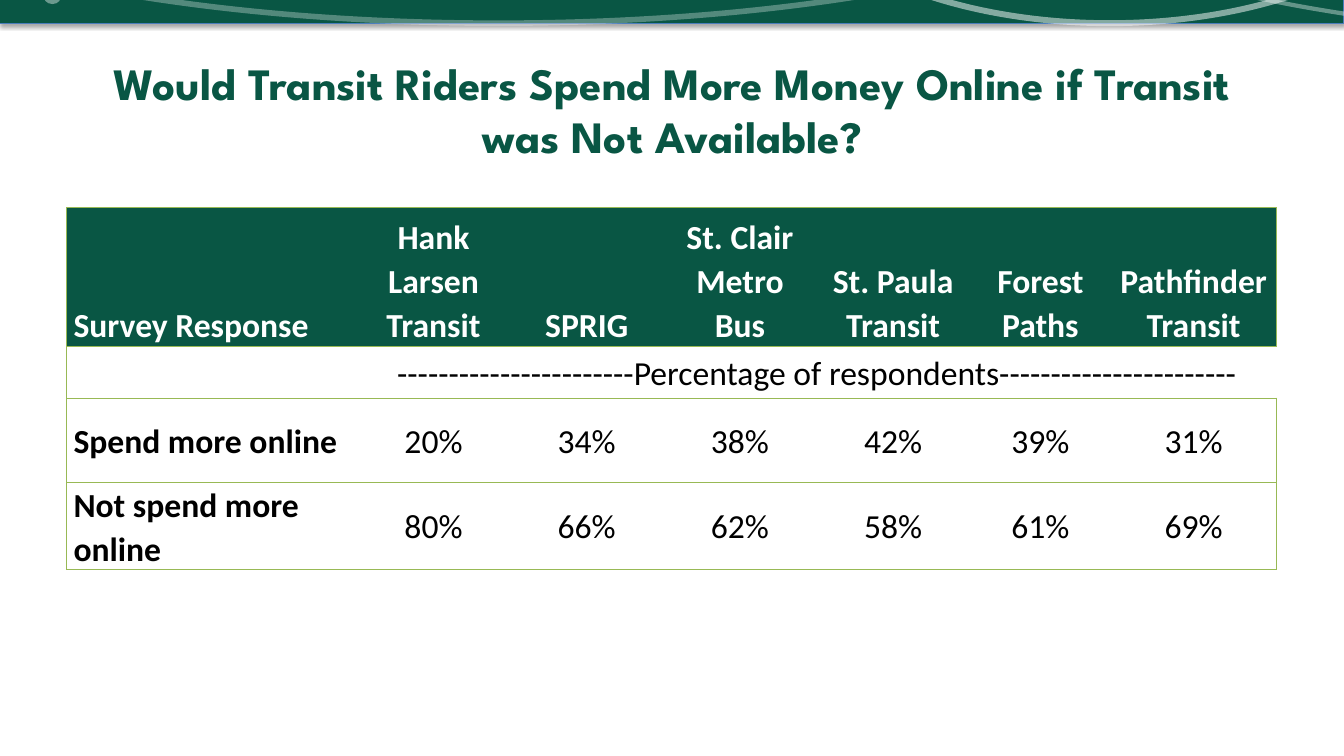
import pptx
import pptx.dml.color
import pptx.enum.shapes
import pptx.enum.text
import pptx.oxml
import pptx.oxml.ns
import pptx.util
from dataclasses import dataclass
from lxml import etree

Inches = pptx.util.Inches
Pt = pptx.util.Pt
Align = pptx.enum.text.PP_ALIGN
Anchor = pptx.enum.text.MSO_ANCHOR
Preset = pptx.enum.shapes.MSO_SHAPE


@dataclass(frozen=True)
class Theme:
    green: str = "095644"
    white: str = "FFFFFF"
    black: str = "000000"
    rule: str = "98B955"
    edge: str = "4B7EBC"
    title_font: str = "League Spartan"
    body_font: str = "Calibri"
    title_size: float = 32
    body_size: float = 24
    rule_width: float = 0.75


THEME = Theme()

SWIRLS = [
    ((-2.22, -3.75, 14.33, 3.98), 4, 30),
    ((7.67, -3.2, 6.67, 3.43), 4.25, 50),
    ((10.49, -2.5, 13.96, 2.92), 3, 37),
]
COLUMN_WIDTHS = [2.88, 1.52, 1.52, 1.52, 1.52, 1.4, 1.64]
ROW_HEIGHTS = [1.38, 0.51, 0.84, 0.84]
DASHES = "-" * 23
SURVEY = [
    ["Survey Response", "Hank Larsen Transit", "SPRIG", "St. Clair Metro Bus",
     "St. Paula Transit", "Forest Paths", "Pathfinder Transit"],
    ["", f"{DASHES}Percentage of respondents{DASHES}"],
    ["Spend more online", "20%", "34%", "38%", "42%", "39%", "31%"],
    ["Not spend more online", "80%", "66%", "62%", "58%", "61%", "69%"],
]


def rgb(color):
    return pptx.dml.color.RGBColor.from_string(color)


def add_child(parent, tag, **attributes):
    child = etree.SubElement(parent, pptx.oxml.ns.qn(tag))
    for name, value in attributes.items():
        child.set(name, str(value))
    return child


def add_span(para, text, font, size, color, bold):
    span = para.add_run()
    span.text = text
    span.font.name = font
    span.font.size = Pt(size)
    span.font.bold = bold
    span.font.color.rgb = rgb(color)


def add_preset(page, preset, place):
    shape = page.shapes.add_shape(preset, *map(Inches, place))
    shape.shadow.inherit = False
    return shape


def set_opacity(holder, percent):
    color = holder.find(".//" + pptx.oxml.ns.qn("a:srgbClr"))
    add_child(color, "a:alpha", val=percent * 1000)


def add_band(page):
    band = add_preset(page, Preset.RECTANGLE, (0, -0.17, 13.33, 0.4))
    band.fill.solid()
    band.fill.fore_color.rgb = rgb(THEME.green)
    band.line.color.rgb = rgb(THEME.edge)
    band.line.width = Pt(THEME.rule_width)
    effects = band._element.spPr.find(pptx.oxml.ns.qn("a:effectLst"))
    shadow = add_child(effects, "a:outerShdw", blurRad=Pt(3.1), dist=Pt(1.8),
                       dir=90 * 60000, rotWithShape=0)
    add_child(shadow, "a:srgbClr", val=THEME.black)
    set_opacity(shadow, 35)


def add_swirl(page, place, width, opacity):
    swirl = add_preset(page, Preset.OVAL, place)
    swirl.fill.background()
    swirl.line.color.rgb = rgb(THEME.white)
    swirl.line.width = Pt(width)
    set_opacity(swirl.line._ln, opacity)


def add_dot(page):
    dot = add_preset(page, Preset.OVAL, (0.44, -0.08, 0.16, 0.12))
    dot.fill.solid()
    dot.fill.fore_color.rgb = rgb(THEME.white)
    dot.line.fill.background()
    set_opacity(dot._element.spPr, 40)


def add_title(page, text):
    box = page.shapes.add_textbox(*map(Inches, (0.89, 0.5, 11.56, 1.15)))
    box.text_frame.word_wrap = True
    para = box.text_frame.paragraphs[0]
    para.alignment = Align.CENTER
    add_span(para, text, THEME.title_font, THEME.title_size, THEME.green, True)


def set_borders(cell, sides):
    properties = cell._tc.get_or_add_tcPr()
    for side in "LRTB":
        line = add_child(properties, f"a:ln{side}", w=Pt(THEME.rule_width))
        if side in sides:
            fill = add_child(line, "a:solidFill")
            add_child(fill, "a:srgbClr", val=THEME.rule)
        else:
            add_child(line, "a:noFill")


def style_cell(cell, row, column):
    sides = "TB"
    if column == 0:
        sides += "L"
    if column == len(COLUMN_WIDTHS) - 1:
        sides += "R"
    set_borders(cell, sides)
    if row == 0:
        cell.fill.solid()
        cell.fill.fore_color.rgb = rgb(THEME.green)
    else:
        cell.fill.background()
    cell.margin_left = cell.margin_right = Inches(0.07)
    cell.margin_top = cell.margin_bottom = 0
    cell.vertical_anchor = Anchor.BOTTOM if row == 0 else Anchor.MIDDLE


def write_cell(cell, text, row, column):
    para = cell.text_frame.paragraphs[0]
    para.alignment = Align.LEFT if column == 0 else Align.CENTER
    para.line_spacing = 1.07
    color = THEME.white if row == 0 else THEME.black
    add_span(para, text, THEME.body_font, THEME.body_size, color,
             row == 0 or column == 0)


def add_survey_table(page):
    frame = page.shapes.add_table(
        len(ROW_HEIGHTS), len(COLUMN_WIDTHS), Inches(0.66), Inches(2.06),
        Inches(sum(COLUMN_WIDTHS)), Inches(sum(ROW_HEIGHTS)))
    table = frame.table
    table.horz_banding = False
    for column, width in zip(table.columns, COLUMN_WIDTHS):
        column.width = Inches(width)
    for row, height in zip(table.rows, ROW_HEIGHTS):
        row.height = Inches(height)
    table.cell(1, 1).merge(table.cell(1, len(COLUMN_WIDTHS) - 1))
    for row in range(len(ROW_HEIGHTS)):
        for column in range(len(COLUMN_WIDTHS)):
            style_cell(table.cell(row, column), row, column)
    for row, texts in enumerate(SURVEY):
        for column, text in enumerate(texts):
            if text:
                write_cell(table.cell(row, column), text, row, column)


def main():
    deck = pptx.Presentation()
    deck.slide_width = Inches(13.33)
    deck.slide_height = Inches(7.5)
    page = deck.slides.add_slide(deck.slide_layouts[6])
    add_band(page)
    for place, width, opacity in SWIRLS:
        add_swirl(page, place, width, opacity)
    add_dot(page)
    add_title(page, "Would Transit Riders Spend More Money Online "
                    "if Transit was Not Available?")
    add_survey_table(page)
    deck.save("out.pptx")


if __name__ == "__main__":
    main()
